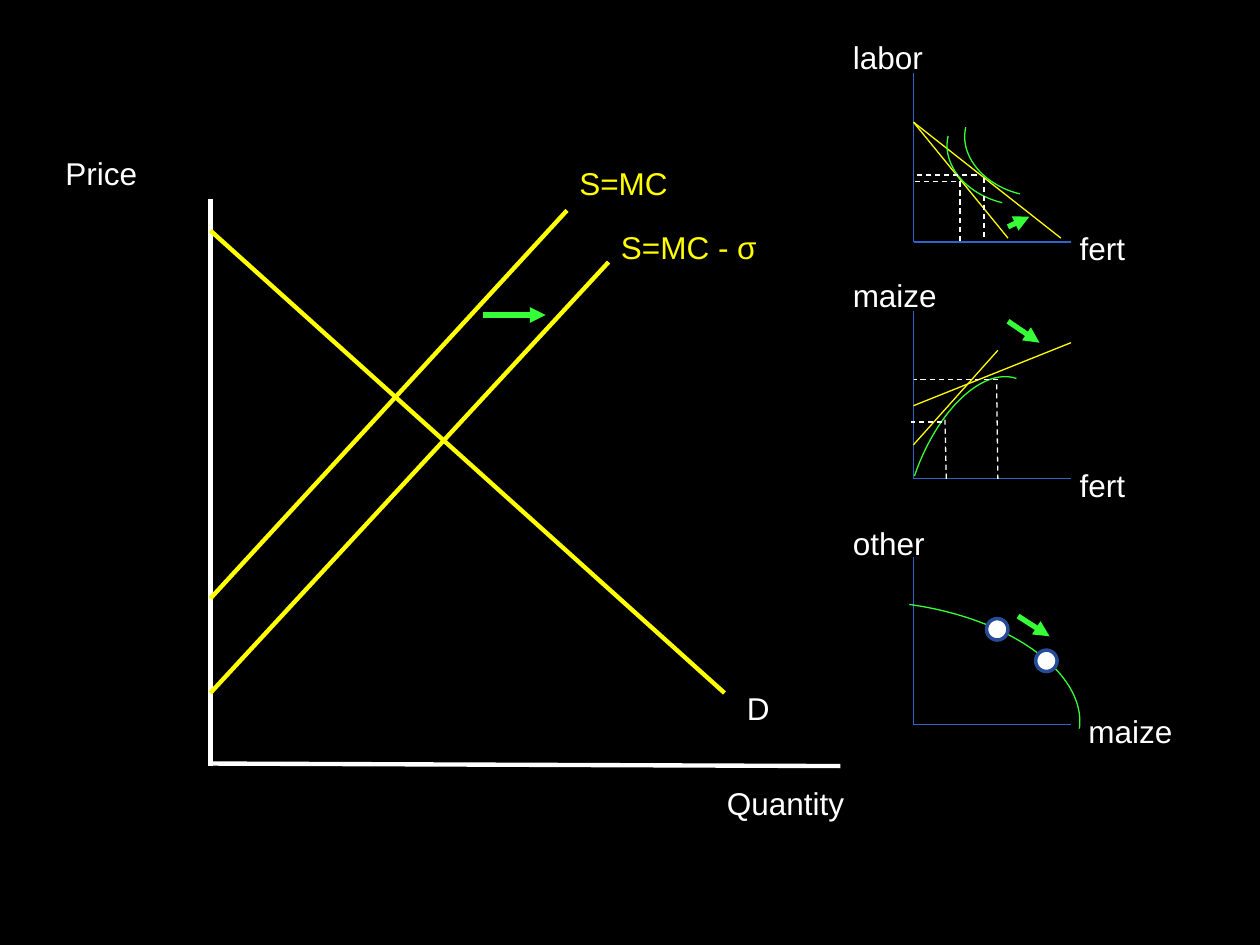
"""Build a slide on how a fertilizer subsidy shifts supply, inputs and output."""
from lxml.etree import SubElement
from pptx import Presentation
from pptx.dml.color import RGBColor
from pptx.enum.dml import MSO_LINE
from pptx.enum.shapes import MSO_CONNECTOR, MSO_SHAPE
from pptx.enum.text import MSO_AUTO_SIZE
from pptx.oxml.ns import qn
from pptx.util import Inches, Pt

BLACK = RGBColor(0x00, 0x00, 0x00)
WHITE = RGBColor(0xFF, 0xFF, 0xFF)
YELLOW = RGBColor(0xFF, 0xFF, 0x00)
GREEN = RGBColor(0x37, 0xFF, 0x37)
BLUE = RGBColor(0x2E, 0x63, 0xCB)
NAVY = RGBColor(0x26, 0x4B, 0x97)

deck = Presentation()
deck.slide_width, deck.slide_height = Inches(10), Inches(7.5)
page = deck.slides.add_slide(deck.slide_layouts[6])
page.background.fill.solid()
page.background.fill.fore_color.rgb = BLACK


def draw_line(points, color, width, dashed=False, arrow=False):
    """Draw a straight line, optionally dashed or with an arrowhead."""
    ends = [Inches(value) for value in points]
    line = page.shapes.add_connector(MSO_CONNECTOR.STRAIGHT, *ends)
    line.line.color.rgb = color
    line.line.width = Pt(width)
    if dashed:
        line.line.dash_style = MSO_LINE.DASH
    properties = line._element.spPr
    if arrow:
        SubElement(properties.find(qn("a:ln")), qn("a:tailEnd"), type="triangle")
    SubElement(properties, qn("a:effectLst"))


def draw_label(text, left, top, width, color=WHITE):
    """Place a one-line label."""
    box = page.shapes.add_textbox(Inches(left), Inches(top), Inches(width), Inches(0.4))
    box.text_frame.word_wrap = True
    box.text_frame.auto_size = MSO_AUTO_SIZE.SHAPE_TO_FIT_TEXT
    span = box.text_frame.paragraphs[0].add_run()
    span.text = text
    span.font.color.rgb = color
    for name, value in {"name": "Arial", "size": Pt(18)}.items():
        setattr(span.font, name, value)


market_axes = [(1.67, 1.58, 1.67, 6.08), (6.67, 6.08, 1.68, 6.06)]
market_curves = [
    (4.5, 1.67, 1.67, 4.75),
    (4.83, 2.08, 1.67, 5.5),
    (5.75, 5.5, 1.67, 1.83),
]
for points in market_axes:
    draw_line(points, WHITE, 2.5)
for points in market_curves:
    draw_line(points, YELLOW, 2.5)

panels = [
    ("labor", "fert", 0.25, 0.58, 1.92, 8.47),
    ("maize", "fert", 2.14, 2.47, 3.8, 8.47),
    ("other", "maize", 4.11, 4.42, 5.75, 8.54),
]
for vertical, horizontal, label_top, axis_top, axis_base, label_left in panels:
    draw_line((7.25, axis_top, 7.25, axis_base), BLUE, 0.75)
    draw_line((8.5, axis_base, 7.25, axis_base), BLUE, 0.75)
    draw_label(vertical, 6.67, label_top, 1)
    draw_label(horizontal, label_left, axis_base - 0.15, 1)

price_lines = [
    (7.25, 0.97, 8, 1.89),
    (7.25, 0.97, 8.42, 1.89),
    (7.25, 3.53, 7.92, 2.78),
    (7.25, 3.22, 8.5, 2.72),
]
for points in price_lines:
    draw_line(points, YELLOW, 0.75)

curves = [
    (7.51, 0.79, 1.08, 0.83, 193.4),
    (7.65, 0.72, 1.08, 0.83, 193.4),
    (6.75, 3.43, 1.99, 1.03, 288.9),
    (5.64, 4.79, 2.94, 1.59, 7.7),
]
for *frame, rotation in curves:
    curve = page.shapes.add_shape(MSO_SHAPE.ARC, *[Inches(value) for value in frame])
    curve.rotation = rotation
    curve.shadow.inherit = False
    curve.fill.background()
    curve.line.color.rgb = GREEN
    curve.line.width = Pt(0.75)

guides = [
    (7.81, 1.41, 7.81, 1.91),
    (7.62, 1.44, 7.62, 1.91),
    (7.59, 1.44, 7.26, 1.44),
    (7.75, 1.39, 7.25, 1.39),
    (7.5, 3.33, 7.51, 3.8),
    (7.91, 3.05, 7.92, 3.8),
    (7.48, 3.35, 7.23, 3.35),
    (7.92, 3.01, 7.25, 3.01),
]
for points in guides:
    draw_line(points, WHITE, 0.75, dashed=True)

for left, top in [(7.83, 4.91), (8.22, 5.16)]:
    dot = page.shapes.add_shape(
        MSO_SHAPE.FLOWCHART_CONNECTOR, Inches(left), Inches(top), Inches(0.17), Inches(0.17)
    )
    dot.shadow.inherit = False
    dot.fill.solid()
    dot.fill.fore_color.rgb = WHITE
    dot.line.color.rgb = NAVY
    dot.line.width = Pt(2)

shifts = [
    (3.83, 2.5, 4.33, 2.5),
    (8, 1.8, 8.17, 1.72),
    (8, 2.55, 8.25, 2.72),
    (8.08, 4.89, 8.33, 5.05),
]
for points in shifts:
    draw_line(points, GREEN, 3, arrow=True)

draw_label("Price", 0.42, 1.17, 0.92)
draw_label("Quantity", 5.67, 6.17, 1.42)
draw_label("S=MC", 4.5, 1.25, 1.08, YELLOW)
draw_label("S=MC - σ", 4.83, 1.76, 1.42, YELLOW)
draw_label("D", 5.83, 5.42, 0.33)

deck.save("out.pptx")
